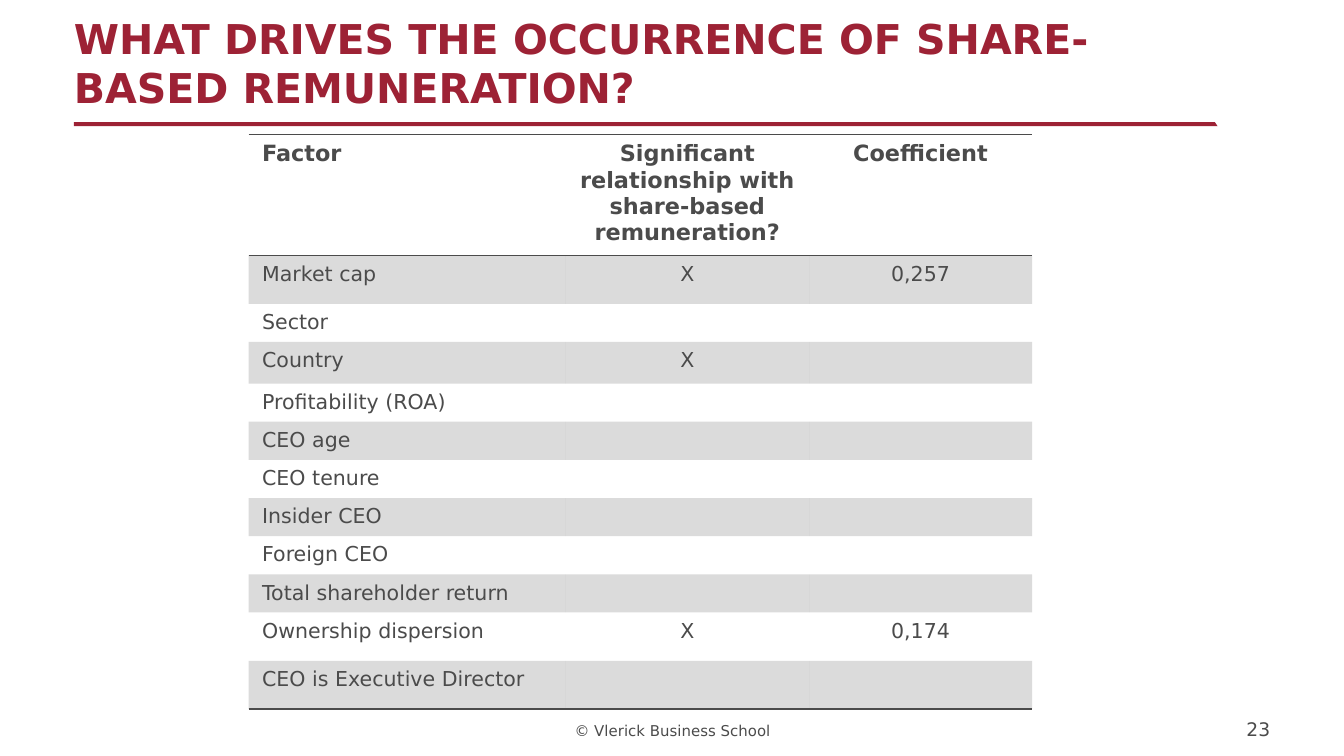
from dataclasses import dataclass

from lxml import etree
from pptx import Presentation
from pptx import util as u
from pptx.dml.color import RGBColor
from pptx.enum import text as t
from pptx.oxml import ns

RED = RGBColor(0x9D, 0x22, 0x35)
GREY = RGBColor(0x4B, 0x4B, 0x4B)
FONT = "DejaVu Sans"
PLAIN_TABLE_STYLE = "{2D5ABB26-0587-4C30-8999-92F81FD0307C}"
SLIDE_WIDTH = 10
SLIDE_HEIGHT = SLIDE_WIDTH * 9 / 16
COLUMN_WIDTHS = (2.36, 1.81, 1.66)
HEADER_HEIGHT = 0.87
HEADINGS = ("Factor", "Significant relationship with share-based remuneration?", "Coefficient")


@dataclass
class Label:
    text: str
    left: float
    top: float
    width: float
    height: float
    size: float
    align: t.PP_ALIGN
    color: RGBColor = GREY
    bold: bool = False
    bottom_inset: float = 0


@dataclass
class Factor:
    name: str
    significant: str = ""
    coefficient: str = ""
    height: float = 0.27


LABELS = (
    Label("© Vlerick Business School", 3.94, 5.35, 2.13, 0.16, 8, t.PP_ALIGN.CENTER, bottom_inset=0.01),
    Label("WHAT DRIVES THE OCCURRENCE OF SHARE-BASED REMUNERATION?",
          0.55, 0, 8.27, 0.83, 22, t.PP_ALIGN.LEFT, RED, True),
    Label("23", 8.9, 5.35, 0.55, 0.16, 10, t.PP_ALIGN.RIGHT),
)
FACTORS = (
    Factor("Market cap", "X", "0,257", 0.36),
    Factor("Sector", height=0.28),
    Factor("Country", "X", height=0.31),
    Factor("Profitability (ROA)"),
    Factor("CEO age"),
    Factor("CEO tenure"),
    Factor("Insider CEO"),
    Factor("Foreign CEO"),
    Factor("Total shareholder return"),
    Factor("Ownership dispersion", "X", "0,174", 0.36),
    Factor("CEO is Executive Director", height=0.36),
)


def write(paragraph, text: str, align: t.PP_ALIGN, size: float, color: RGBColor, bold: bool) -> None:
    paragraph.alignment = align
    if not text:
        etree.SubElement(paragraph._p, ns.qn("a:endParaRPr"), sz=str(int(size * 100)))
        return
    run = paragraph.add_run()
    run.text = text
    for name, value in {"name": FONT, "size": u.Pt(size), "bold": bold}.items():
        setattr(run.font, name, value)
    run.font.color.rgb = color


def add_label(slide, label: Label) -> None:
    box = slide.shapes.add_textbox(*map(u.Inches, (label.left, label.top, label.width, label.height)))
    frame_format = {
        "word_wrap": True,
        "vertical_anchor": t.MSO_ANCHOR.BOTTOM,
        "margin_left": 0,
        "margin_right": 0,
        "margin_top": 0,
        "margin_bottom": u.Inches(label.bottom_inset),
    }
    for name, value in frame_format.items():
        setattr(box.text_frame, name, value)
    write(box.text_frame.paragraphs[0], label.text, label.align, label.size, label.color, label.bold)


def add_title_rule(slide) -> None:
    builder = slide.shapes.build_freeform(u.Inches(0.55), u.Inches(0.91))
    corners = ((9.04, 0.91), (9.06, 0.94), (0.55, 0.94))
    builder.add_line_segments([(u.Inches(x), u.Inches(y)) for x, y in corners], close=True)
    rule = builder.convert_to_shape()
    rule.shadow.inherit = False
    rule.fill.solid()
    rule.fill.fore_color.rgb = RED
    rule.line.fill.background()


def add_border(cell, side: str) -> None:
    line = etree.SubElement(cell._tc.get_or_add_tcPr(), ns.qn(f"a:{side}"), w=str(u.Pt(1)))
    fill = etree.SubElement(line, ns.qn("a:solidFill"))
    etree.SubElement(fill, ns.qn("a:srgbClr"), val=str(GREY))


def fill_cell(cell, shaded: bool) -> None:
    if not shaded:
        cell.fill.background()
        return
    cell.fill.solid()
    cell.fill.fore_color.rgb = GREY
    color = cell._tc.tcPr.find(f"{ns.qn('a:solidFill')}/{ns.qn('a:srgbClr')}")
    etree.SubElement(color, ns.qn("a:alpha"), val="20000")


def add_factor_table(slide) -> None:
    rows = [HEADINGS] + [(f.name, f.significant, f.coefficient) for f in FACTORS]
    heights = [HEADER_HEIGHT] + [f.height for f in FACTORS]
    frame = slide.shapes.add_table(
        len(rows), len(COLUMN_WIDTHS), u.Inches(1.85), u.Inches(1),
        u.Inches(sum(COLUMN_WIDTHS)), u.Inches(sum(heights)))
    table = frame.table
    table.horz_banding = False
    table._tbl.tblPr.find(ns.qn("a:tableStyleId")).text = PLAIN_TABLE_STYLE
    for column, width in zip(table.columns, COLUMN_WIDTHS):
        column.width = u.Inches(width)
    for index, (row, height, values) in enumerate(zip(table.rows, heights, rows)):
        row.height = u.Inches(height)
        header = index == 0
        for position, (cell, value) in enumerate(zip(row.cells, values)):
            align = t.PP_ALIGN.CENTER if position else t.PP_ALIGN.LEFT
            write(cell.text_frame.paragraphs[0], value, align, 12 if header else 11, GREY, header)
            if header:
                add_border(cell, "lnT")
            if header or index == len(FACTORS):
                add_border(cell, "lnB")
            fill_cell(cell, index % 2 == 1)


def main() -> None:
    presentation = Presentation()
    presentation.slide_width = u.Inches(SLIDE_WIDTH)
    presentation.slide_height = u.Inches(SLIDE_HEIGHT)
    slide = presentation.slides.add_slide(presentation.slide_layouts[6])
    add_title_rule(slide)
    for label in LABELS:
        add_label(slide, label)
    add_factor_table(slide)
    presentation.save("out.pptx")


if __name__ == "__main__":
    main()
